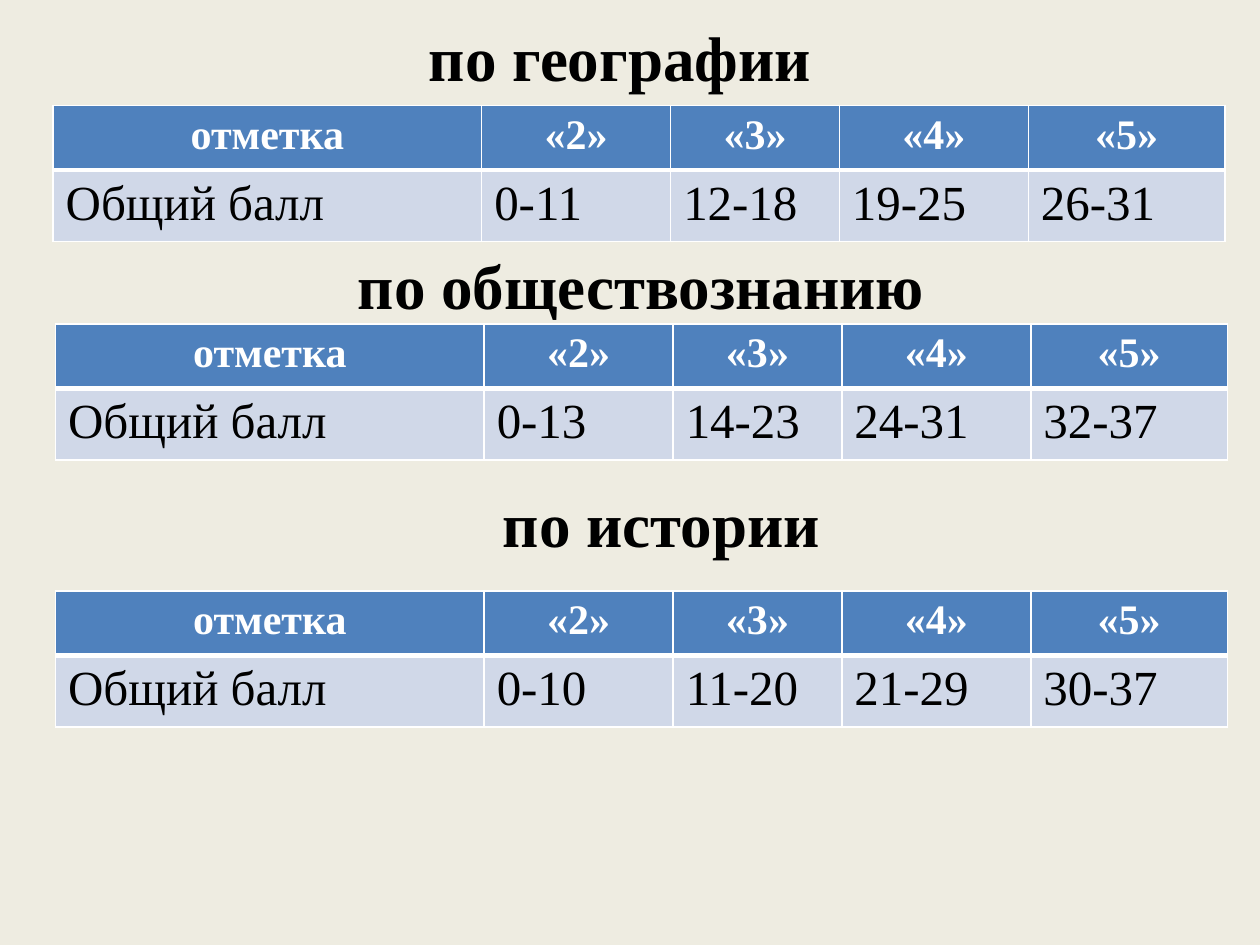
from dataclasses import dataclass

from pptx import Presentation
from pptx.dml.color import RGBColor
from pptx.enum.text import MSO_ANCHOR as Anchor, PP_ALIGN as Align
from pptx.oxml.ns import qn
from pptx.oxml.xmlchemy import OxmlElement as Element
from pptx.util import Cm, Pt

FONT = "Times New Roman"
BLACK, WHITE = "000000", "FFFFFF"
HEADER_FILL, BODY_FILL = "4F81BD", "D0D8E8"
COLUMN_WIDTHS = (8.64, 3.81, 3.4, 3.81, 3.96)
ROW_HEIGHT = 1.3
GRADES = ("отметка", "«2»", "«3»", "«4»", "«5»")


@dataclass(frozen=True)
class Subject:
    title: str
    title_left: float
    title_top: float
    table_left: float
    table_top: float
    scores: tuple[str, ...]


@dataclass(frozen=True)
class RowStyle:
    fill: str
    color: str
    size: int
    bold: bool
    align: Align
    borders: dict[str, int]


HEADER = RowStyle(HEADER_FILL, WHITE, 24, True, Align.CENTER,
                  {"L": 1, "R": 1, "T": 1, "B": 3})
BODY = RowStyle(BODY_FILL, BLACK, 28, False, Align.LEFT,
                {"L": 1, "R": 1, "T": 3, "B": 1})

SUBJECTS = (
    Subject("по географии", 1.7, 0.33, 1.07, 2.13,
            ("0-11", "12-18", "19-25", "26-31")),
    Subject("по обществознанию", 2.13, 4.93, 1.12, 6.53,
            ("0-13", "14-23", "24-31", "32-37")),
    Subject("по истории", 2.54, 9.73, 1.12, 11.91,
            ("0-10", "11-20", "21-29", "30-37")),
)


def paint(target, color: str) -> None:
    target.solid()
    target.fore_color.rgb = RGBColor.from_string(color)


def write(frame, text: str, size: int, color: str, bold: bool, align: Align) -> None:
    para = frame.paragraphs[0]
    para.alignment = align
    span = para.add_run()
    span.text = text
    span.font.name = FONT
    span.font.size = Pt(size)
    span.font.bold = bold
    paint(span.font.fill, color)


def add_border(cell, side: str, width: int) -> None:
    line = Element(f"a:ln{side}")
    line.set("w", str(Pt(width)))
    fill = Element("a:solidFill")
    color = Element("a:srgbClr")
    color.set("val", WHITE)
    fill.append(color)
    line.append(fill)
    cell._tc.get_or_add_tcPr().append(line)


def fill_row(cells, texts: tuple[str, ...], style: RowStyle) -> None:
    for cell, text in zip(cells, texts):
        for side, width in style.borders.items():
            add_border(cell, side, width)
        paint(cell.fill, style.fill)
        write(cell.text_frame, text, style.size, style.color, style.bold, style.align)


def add_title(page, subject: Subject) -> None:
    box = page.shapes.add_textbox(
        Cm(subject.title_left), Cm(subject.title_top), Cm(21.59), Cm(1.6))
    box.text_frame.word_wrap = True
    box.text_frame.vertical_anchor = Anchor.MIDDLE
    write(box.text_frame, subject.title, 36, BLACK, True, Align.CENTER)


def add_scores(page, subject: Subject) -> None:
    table = page.shapes.add_table(
        2, len(GRADES), Cm(subject.table_left), Cm(subject.table_top),
        Cm(sum(COLUMN_WIDTHS)), Cm(2 * ROW_HEIGHT)).table
    table.horz_banding = False
    for column, width in zip(table.columns, COLUMN_WIDTHS):
        column.width = Cm(width)
    rows = ((GRADES, HEADER), (("Общий балл", *subject.scores), BODY))
    for row, (texts, style) in zip(table.rows, rows):
        row.height = Cm(ROW_HEIGHT)
        fill_row(row.cells, texts, style)


def main() -> None:
    deck = Presentation()
    deck.slide_width, deck.slide_height = Cm(25.4), Cm(19.05)
    page = deck.slides.add_slide(deck.slide_layouts[6])
    paint(page.background.fill, "EEECE1")
    for subject in SUBJECTS:
        add_title(page, subject)
        add_scores(page, subject)
    deck.save("out.pptx")


if __name__ == "__main__":
    main()
